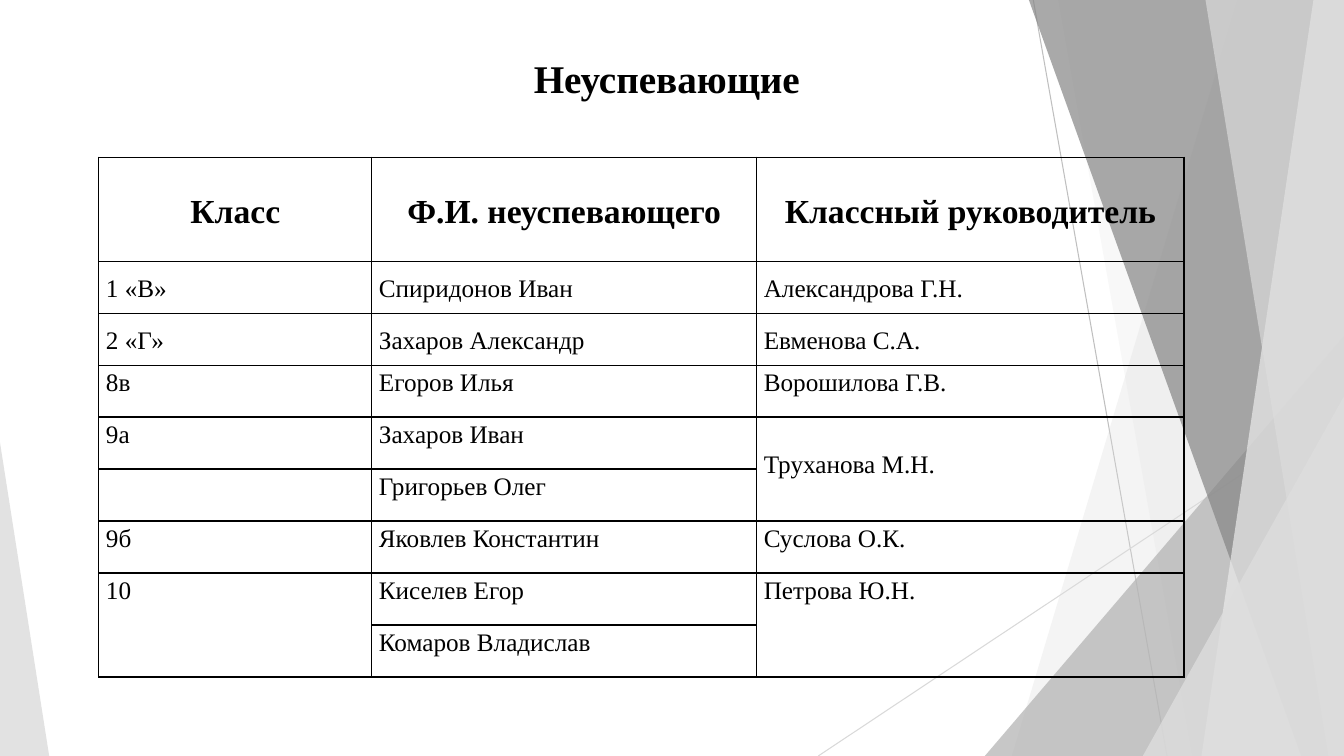
"""Build a slide with a table of pupils over faceted grey panels."""
import pptx
import pptx.util
import pptx.dml.color
import pptx.enum.shapes
import pptx.enum.text
import pptx.oxml
import pptx.oxml.ns

Cm = pptx.util.Cm
Pt = pptx.util.Pt
RGBColor = pptx.dml.color.RGBColor
Align = pptx.enum.text.PP_ALIGN
Anchor = pptx.enum.text.MSO_ANCHOR
qn = pptx.oxml.ns.qn

BLACK = RGBColor(0x00, 0x00, 0x00)
DARK = RGBColor(0x85, 0x85, 0x85)
MID = RGBColor(0xB2, 0xB2, 0xB2)
RULE = RGBColor(0xBF, 0xBF, 0xBF)
FAINT = RGBColor(0xD9, 0xD9, 0xD9)
LIGHT = RGBColor(0xDD, 0xDD, 0xDD)
PALE = RGBColor(0xEB, 0xEB, 0xEB)

FONT = "Times New Roman"
WIDTH, HEIGHT = 33.87, 19.05
COLS = (6.88, 9.7, 10.77)
HEAD, ROW = 2.62, 1.31
ROWS = (
    ("Класс", "Ф.И. неуспевающего", "Классный руководитель"),
    ("1 «В»", "Спиридонов Иван", "Александрова Г.Н."),
    ("2 «Г»", "Захаров Александр", "Евменова С.А."),
    ("8в", "Егоров Илья", "Ворошилова Г.В."),
    ("9а", "Захаров Иван", "Труханова М.Н."),
    ("", "Григорьев Олег", ""),
    ("9б", "Яковлев Константин", "Суслова О.К."),
    ("10", "Киселев Егор", "Петрова Ю.Н."),
    ("", "Комаров Владислав", ""),
)
MERGED = ((4, 2), (7, 0), (7, 2))


def element(tag, attrs="", inner=""):
    """Return a new DrawingML element."""
    space = pptx.oxml.ns.nsdecls("a")
    return pptx.oxml.parse_xml(f"<a:{tag} {space} {attrs}>{inner}</a:{tag}>")


def write(frame, text, size=18, bold=False, align=Align.JUSTIFY, lead=1.15):
    """Put one formatted paragraph into a text frame."""
    para = frame.paragraphs[0]
    para.alignment, para.line_spacing = align, lead
    run = para.add_run()
    run.text = text
    run.font.name, run.font.size, run.font.bold = FONT, Pt(size), bold
    run.font.color.rgb = BLACK


def tint(shape, color, alpha):
    """Fill a shape with a see-through colour and no outline."""
    shape.shadow.inherit = False
    shape.fill.solid()
    shape.fill.fore_color.rgb = color
    shape.line.fill.background()
    tone = shape.fill._xPr.find(qn("a:solidFill"))[0]
    tone.append(element("alpha", f'val="{alpha * 1000}"'))


def line(slide, start, end, color):
    """Draw a thin straight line."""
    rule = slide.shapes.add_connector(
        pptx.enum.shapes.MSO_CONNECTOR.STRAIGHT,
        *(Cm(v) for v in start + end))
    rule.line.color.rgb = color
    rule.line.width = Pt(0.75)
    rule._element.spPr.append(element("effectLst"))


def panel(slide, top, base, color, alpha):
    """Draw a slanted panel that reaches the right edge."""
    edge = ((WIDTH, 0), (WIDTH, HEIGHT), (base, HEIGHT))
    build = slide.shapes.build_freeform(Cm(top), 0)
    build.add_line_segments([(Cm(x), Cm(y)) for x, y in edge])
    tint(build.convert_to_shape(), color, alpha)


def wedge(slide, left, top, width, peak, color, alpha):
    """Draw a triangle that stands on the bottom edge."""
    shape = slide.shapes.add_shape(
        pptx.enum.shapes.MSO_SHAPE.ISOSCELES_TRIANGLE,
        Cm(left), Cm(top), Cm(width), Cm(HEIGHT - top))
    shape.adjustments[0] = peak
    tint(shape, color, alpha)


def border(cell):
    """Give a cell a black line on each side and no fill."""
    cell.fill.background()
    ink = f'<a:solidFill><a:srgbClr val="{BLACK}"/></a:solidFill>'
    props = cell._tc.get_or_add_tcPr()
    for at, side in enumerate(("lnL", "lnR", "lnT", "lnB")):
        props.insert(at, element(side, f'w="{Pt(1)}"', ink))


def grid(slide):
    """Add the table of pupils."""
    frame = slide.shapes.add_table(
        len(ROWS), len(COLS), Cm(2.49), Cm(3.96),
        Cm(sum(COLS)), Cm(HEAD + ROW * (len(ROWS) - 1)))
    table = frame.table
    table.first_row = table.horz_banding = False
    for col, width in zip(table.columns, COLS):
        col.width = Cm(width)
    for r, texts in enumerate(ROWS):
        table.rows[r].height = Cm(ROW if r else HEAD)
        for c, text in enumerate(texts):
            cell = table.cell(r, c)
            cell.margin_left = cell.margin_right = Cm(0.18)
            cell.margin_top = cell.margin_bottom = 0
            cell.vertical_anchor = Anchor.MIDDLE if r < 3 else Anchor.TOP
            border(cell)
            if r == 0:
                write(cell.text_frame, text, size=24, bold=True,
                      align=Align.CENTER)
            elif text:
                write(cell.text_frame, text)
    for r, c in MERGED:
        table.cell(r, c).merge(table.cell(r + 1, c))
    tutor = table.cell(4, 2)
    tutor.vertical_anchor = Anchor.MIDDLE
    tutor.margin_bottom = Cm(0.3)


def title(slide, text):
    """Add the heading."""
    box = slide.shapes.add_textbox(Cm(1.45), Cm(1.24), Cm(30.71), Cm(2.5))
    box.text_frame.word_wrap = True
    write(box.text_frame, text, size=28, bold=True, align=Align.CENTER, lead=1)


def main():
    """Build and save the slide."""
    deck = pptx.Presentation()
    deck.slide_width, deck.slide_height = Cm(WIDTH), Cm(HEIGHT)
    slide = deck.slides.add_slide(deck.slide_layouts[6])
    line(slide, (26.04, 0), (29.41, HEIGHT), RULE)
    line(slide, (WIDTH, 10.24), (20.62, HEIGHT), FAINT)
    panel(slide, 31.19, 25.5, LIGHT, 30)
    panel(slide, 26.67, 30.05, LIGHT, 20)
    wedge(slide, 24.82, 8.46, 9.05, 1, MID, 72)
    panel(slide, 25.93, 32.79, DARK, 70)
    panel(slide, 33.1, 30.28, PALE, 70)
    panel(slide, 30.38, 33.48, LIGHT, 65)
    wedge(slide, 28.8, 9.98, 5.07, 1, LIGHT, 80)
    wedge(slide, 0, 11.15, 1.24, 0, LIGHT, 85)
    title(slide, "Неуспевающие")
    grid(slide)
    deck.save("out.pptx")


if __name__ == "__main__":
    main()
